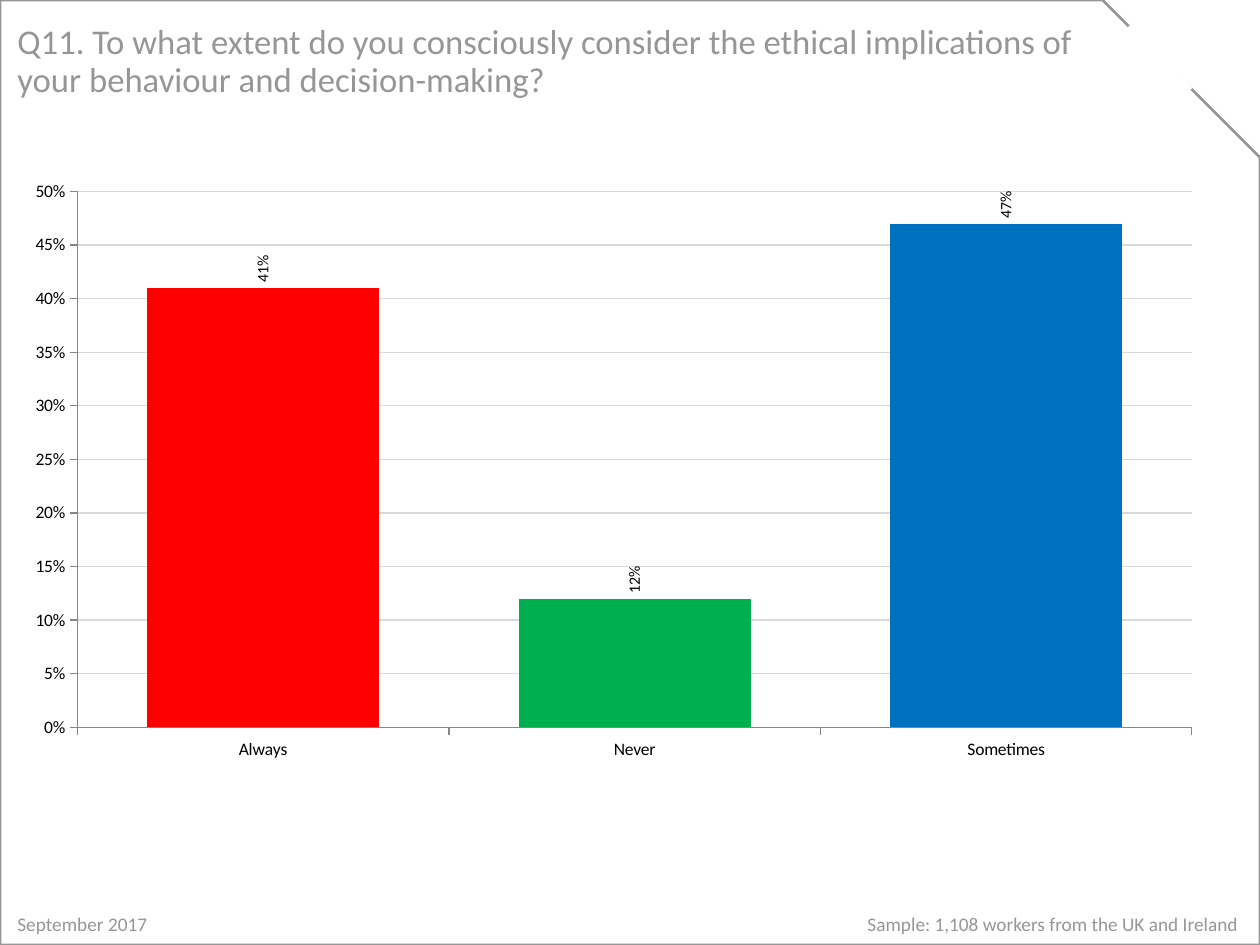
from dataclasses import dataclass

from lxml.etree import SubElement
from pptx import Presentation
from pptx.chart.data import CategoryChartData
from pptx.dml.color import RGBColor
from pptx.enum.chart import XL_CHART_TYPE, XL_LABEL_POSITION, XL_TICK_MARK
from pptx.enum.shapes import MSO_CONNECTOR, MSO_SHAPE
from pptx.enum.text import MSO_ANCHOR
from pptx.oxml import parse_xml
from pptx.oxml.ns import nsdecls, qn
from pptx.util import Inches, Pt

FONT = "Calibri"
COLORS = {
    "grey": "969696",
    "white": "FFFFFF",
    "black": "000000",
    "axis": "868686",
    "grid": "D9D9D9",
    "red": "FF0000",
    "green": "00B050",
    "blue": "0070C0",
}


@dataclass
class TextLine:
    text: str
    left: float
    top: float
    width: float
    height: float
    size: float
    spacing: float = 1.0
    right_tab: float = 0


@dataclass
class Answer:
    label: str
    share: float
    color: str


TITLE = TextLine(
    "Q11. To what extent do you consciously consider the ethical implications "
    "of your behaviour and decision-making?",
    0.04, 0.16, 8.81, 0.67, 19.8, spacing=0.9)
FOOTER = TextLine(
    "September 2017\tSample: 1,108 workers from the UK and Ireland",
    0.04, 7.19, 9.94, 0.29, 11, right_tab=9.69)
ANSWERS = [
    Answer("Always", 0.41, "red"),
    Answer("Never", 0.12, "green"),
    Answer("Sometimes", 0.47, "blue"),
]


def rgb(name: str) -> RGBColor:
    return RGBColor.from_string(COLORS[name])


def style_font(font, size: float, color: str) -> None:
    font.name = FONT
    font.size = Pt(size)
    font.color.rgb = rgb(color)


def style_line(line, color: str, width: float) -> None:
    line.color.rgb = rgb(color)
    line.width = Pt(width)


def add_text(slide, item: TextLine) -> None:
    box = slide.shapes.add_textbox(Inches(item.left), Inches(item.top),
                                   Inches(item.width), Inches(item.height))
    text_frame = box.text_frame
    text_frame.word_wrap = True
    text_frame.vertical_anchor = MSO_ANCHOR.MIDDLE
    text_frame.text = item.text
    paragraph = text_frame.paragraphs[0]
    paragraph.line_spacing = item.spacing
    if item.right_tab:
        properties = paragraph._p.get_or_add_pPr()
        tab_list = SubElement(properties, qn("a:tabLst"))
        SubElement(tab_list, qn("a:tab"), pos=str(Inches(item.right_tab)), algn="r")
    for run in paragraph.runs:
        style_font(run.font, item.size, "grey")


def add_frame(slide, width: int, height: int) -> None:
    # Page border with a snipped corner
    frame = slide.shapes.add_shape(MSO_SHAPE.SNIP_1_RECTANGLE, 0, 0, width, height)
    frame.adjustments[0] = 0.1667
    frame.shadow.inherit = False
    frame.fill.background()
    style_line(frame.line, "grey", 1.5)
    # White stroke that opens a gap in the snipped edge
    gap = slide.shapes.add_connector(MSO_CONNECTOR.STRAIGHT, Inches(8.97), Inches(0.2),
                                     Inches(9.44), Inches(0.72))
    style_line(gap.line, "white", 4.5)
    SubElement(gap._element.spPr, qn("a:effectLst"))


def set_plot_layout(chart, x: float, y: float, width: float, height: float) -> None:
    plot_area = chart._chartSpace.chart.plotArea
    for old_layout in plot_area.findall(qn("c:layout")):
        plot_area.remove(old_layout)
    plot_area.insert(0, parse_xml(
        f'<c:layout {nsdecls("c")}><c:manualLayout><c:layoutTarget val="inner"/>'
        f'<c:xMode val="edge"/><c:yMode val="edge"/><c:x val="{x}"/><c:y val="{y}"/>'
        f'<c:w val="{width}"/><c:h val="{height}"/></c:manualLayout></c:layout>'))


def add_answer_chart(slide, answers: list[Answer]) -> None:
    data = CategoryChartData(number_format="0%")
    data.categories = [answer.label for answer in answers]
    data.add_series("Series 1", [answer.share for answer in answers])
    chart = slide.shapes.add_chart(
        XL_CHART_TYPE.COLUMN_CLUSTERED, Inches(0.27), Inches(1.38),
        Inches(9.31), Inches(5.37), data).chart
    chart.has_legend = False
    chart.has_title = False
    style_font(chart.font, 10, "black")
    set_plot_layout(chart, 0.037, 0.026, 0.95, 0.792)

    # Axes
    for axis in (chart.category_axis, chart.value_axis):
        axis.major_tick_mark = XL_TICK_MARK.OUTSIDE
        axis.minor_tick_mark = XL_TICK_MARK.NONE
        style_line(axis.format.line, "axis", 0.75)
        style_font(axis.tick_labels.font, 10, "black")
    value_axis = chart.value_axis
    value_axis.minimum_scale = 0
    value_axis.maximum_scale = 0.5
    value_axis.major_unit = 0.05
    value_axis.has_major_gridlines = True
    style_line(value_axis.major_gridlines.format.line, "grid", 0.75)
    value_axis.tick_labels.number_format = "0%"
    value_axis.tick_labels.number_format_is_linked = False

    # Columns
    plot = chart.plots[0]
    plot.gap_width = 60
    plot.vary_by_categories = False
    series = plot.series[0]
    for index, answer in enumerate(answers):
        fill = series.points[index].format.fill
        fill.solid()
        fill.fore_color.rgb = rgb(answer.color)

    # Upright value labels
    labels = series.data_labels
    labels.show_value = True
    labels.position = XL_LABEL_POSITION.OUTSIDE_END
    labels.number_format = "0%"
    labels.number_format_is_linked = False
    style_font(labels.font, 9, "black")
    body = labels._element.find(qn("c:txPr")).find(qn("a:bodyPr"))
    body.set("rot", "-5400000")
    body.set("vert", "horz")


def main() -> None:
    presentation = Presentation()
    presentation.slide_width = Inches(10)
    presentation.slide_height = Inches(7.5)
    slide = presentation.slides.add_slide(presentation.slide_layouts[6])
    slide.background.fill.solid()
    slide.background.fill.fore_color.rgb = rgb("white")

    add_text(slide, FOOTER)
    add_frame(slide, presentation.slide_width, presentation.slide_height)
    add_text(slide, TITLE)
    add_answer_chart(slide, ANSWERS)
    presentation.save("out.pptx")


if __name__ == "__main__":
    main()
